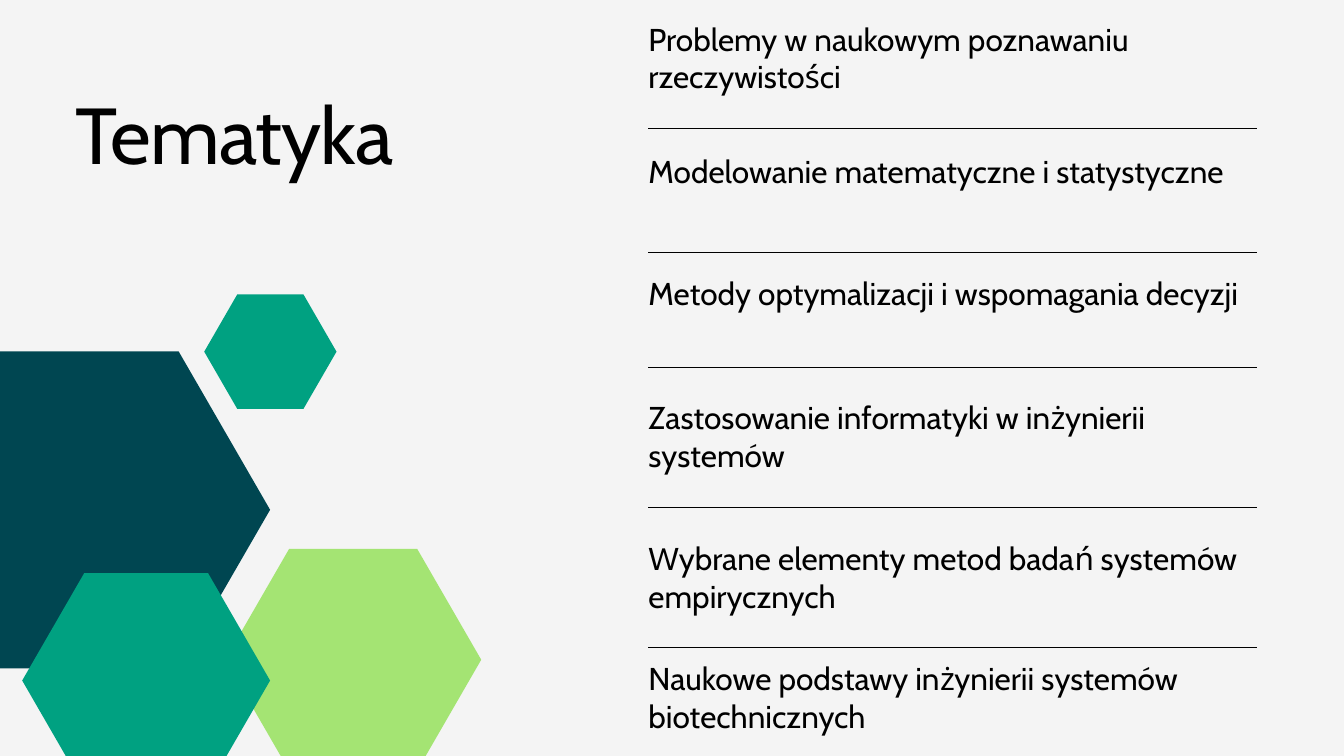
from math import sqrt

from lxml import etree
from pptx import Presentation
from pptx.dml.color import RGBColor
from pptx.enum import shapes, text
from pptx.oxml.ns import qn
from pptx.util import Cm, Pt

BACKGROUND = RGBColor(0xF4, 0xF4, 0xF4)
BLACK = RGBColor(0, 0, 0)
PETROL = RGBColor(0x00, 0x46, 0x51)
LIME = RGBColor(0xA4, 0xE4, 0x73)
GREEN = RGBColor(0x00, 0xA1, 0x81)

FONT = "Cabin"
TOPIC_LEFT, RULE_RIGHT = 24.51, 47.5

# left, top, width, colour; from back to front
HEXAGONS = [
    (-3.63, 13.28, 13.84, PETROL),
    (8.51, 20.75, 9.68, LIME),
    (7.72, 11.13, 5, GREEN),
    (0.84, 21.67, 9.37, GREEN),
]
# top, width, wording
TOPICS = [
    (0.74, 23.8, "Problemy w naukowym poznawaniu rzeczywistości"),
    (5.74, 22.58, "Modelowanie matematyczne i statystyczne"),
    (10.36, 23.24, "Metody optymalizacji i wspomagania decyzji"),
    (15.06, 23.8, "Zastosowanie informatyki w inżynierii systemów"),
    (20.37, 22.99, "Wybrane elementy metod badań systemów empirycznych"),
    (24.92, 22.99, "Naukowe podstawy inżynierii systemów biotechnicznych"),
]
RULE_TOPS = [4.85, 9.53, 13.87, 19.18, 24.49]


def write(frame, wording, size, line_height):
    """Fill a text frame with one left-aligned run, without margins."""
    frame.margin_left = frame.margin_right = 0
    frame.margin_top = frame.margin_bottom = 0
    frame.word_wrap = True
    frame.auto_size = text.MSO_AUTO_SIZE.NONE
    frame.vertical_anchor = text.MSO_ANCHOR.TOP
    paragraph = frame.paragraphs[0]
    paragraph.alignment = text.PP_ALIGN.LEFT
    paragraph.line_spacing = Pt(line_height)
    run = paragraph.add_run()
    run.text = wording
    run.font.name = FONT
    run.font.size = Pt(size)
    run.font.color.rgb = BLACK
    return run


def set_title(slide, wording):
    title = slide.shapes.title
    title.left, title.top = Cm(2.84), Cm(3.23)
    title.width, title.height = Cm(15.32), Cm(3.58)
    run = write(title.text_frame, wording, 85, 102)
    run.font._element.set("spc", "-80")


def add_hexagon(slide, left, top, width, colour):
    """Add a regular hexagon that stands on a flat side."""
    hexagon = slide.shapes.add_shape(
        shapes.MSO_SHAPE.HEXAGON,
        Cm(left), Cm(top), Cm(width), Cm(width * sqrt(3) / 2))
    hexagon.adjustments[0] = 1 / (2 * sqrt(3))
    hexagon.fill.solid()
    hexagon.fill.fore_color.rgb = colour
    hexagon.line.fill.background()
    hexagon.shadow.inherit = False


def add_topic(slide, top, width, wording):
    topic = slide.shapes.add_textbox(
        Cm(TOPIC_LEFT), Cm(top), Cm(width), Cm(2.9))
    write(topic.text_frame, wording, 33.8, 40.5)


def add_rule(slide, top):
    rule = slide.shapes.add_connector(
        shapes.MSO_CONNECTOR.STRAIGHT,
        Cm(TOPIC_LEFT), Cm(top), Cm(RULE_RIGHT), Cm(top))
    rule.line.color.rgb = BLACK
    rule.line.width = Pt(0.75)
    etree.SubElement(rule._element.spPr, qn("a:effectLst"))


def main():
    deck = Presentation()
    deck.slide_width, deck.slide_height = Cm(50.8), Cm(28.58)
    slide = deck.slides.add_slide(deck.slide_layouts.get_by_name("Title Only"))
    slide.background.fill.solid()
    slide.background.fill.fore_color.rgb = BACKGROUND

    set_title(slide, "Tematyka")
    for hexagon in HEXAGONS:
        add_hexagon(slide, *hexagon)
    for topic in TOPICS:
        add_topic(slide, *topic)
    for top in RULE_TOPS:
        add_rule(slide, top)
    deck.save("out.pptx")


if __name__ == "__main__":
    main()
